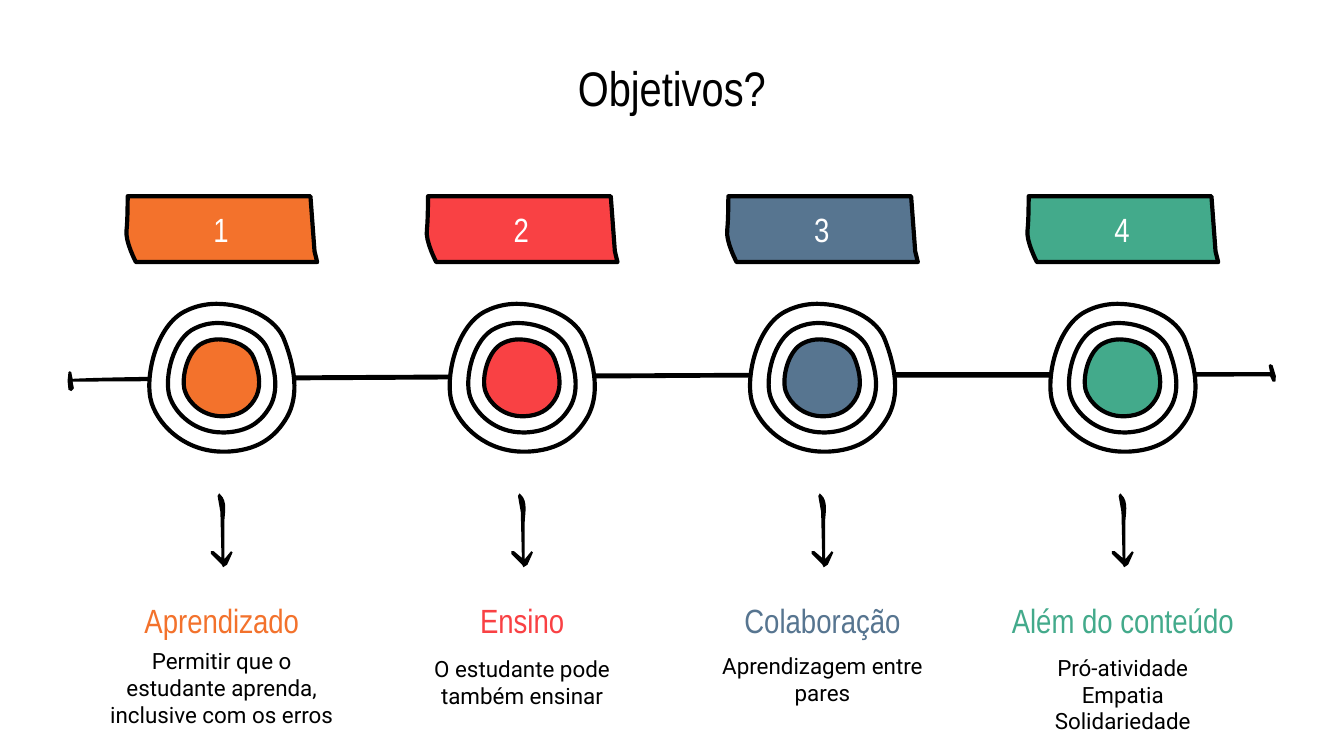
from pptx import Presentation
from pptx.dml.color import RGBColor
from pptx.enum import text
from pptx.oxml import ns, xmlchemy
from pptx.util import Pt

BLACK = RGBColor(0x00, 0x00, 0x00)
WHITE = RGBColor(0xFF, 0xFF, 0xFF)
ORANGE = RGBColor(0xF3, 0x72, 0x2C)
RED = RGBColor(0xF9, 0x41, 0x44)
BLUE = RGBColor(0x57, 0x75, 0x90)
GREEN = RGBColor(0x43, 0xAA, 0x8B)

HEAD_FONT, BODY_FONT = "Arial Narrow", "Roboto"
FIRST_X, PITCH = 118.8, 160.9  # column centres

# Goal: heading, body lines, top of the body box, colour
GOALS = [
    ("Aprendizado", ["Permitir que o estudante aprenda, inclusive com os erros"], 345.6, ORANGE),
    ("Ensino", ["O estudante pode também ensinar"], 342.7, RED),
    ("Colaboração", ["Aprendizagem entre pares"], 341.3, BLUE),
    ("Além do conteúdo", ["Pró-atividade", "Empatia", "Solidariedade"], 349.2, GREEN),
]

# Outlines: a start point, then lines (x, y) and curves (two controls and an end)
TIMELINE = [
    (680.4, 195.1), (679.7, 196), (680.4, 199.4), (493, 199.4), (305.3, 200.2),
    (270, 200.9, 74.2, 200.9, 38.9, 203),
    (38.2, 199.4), (37.4, 198.9), (36.7, 199.4), (36.2, 204), (36.7, 208.8),
    (38.2, 209.5), (39.6, 208.1), (38.9, 204.5), (293.8, 203), (388, 202.3),
    (576, 202.3), (680.4, 201.6), (681.8, 204.5), (683.3, 204.5), (683.5, 201.5),
    (681.8, 195.8),
]
RING = [
    (-2.5, -39.6),
    (-8.3, -39.6, -14, -38.2, -18.4, -36),
    (-34.9, -28.8, -41.4, 0.7, -37.1, 13.7),
    (-32.8, 26.6, -18.4, 39.6, 1.1, 39.6),
    (3.2, 39.6),
    (18.4, 38.9, 27.7, 33.1, 34.2, 23),
    (41.4, 12.2, 40.7, -2.2, 34.2, -19.4),
    (29.9, -32.4, 12.6, -39.6, -2.5, -39.6),
]
BANNER = [
    (-50.4, 0),
    (-50.4, 0, -50.4, 13, -51, 18),
    (-52, 24, -46, 35.3, -46, 35.3),
    (51.1, 35.3), (49.7, 29.5), (47.5, 0),
]
ARROW = [
    (0.7, 39.6), (2.9, 38.2), (5.8, 31.7), (5, 31), (1.4, 35.3), (1.4, 15.8),
    (1.4, 11.5, 3.4, 4.3, -0.7, 0.7),
    (-1.4, 0), (-2.2, 1.4), (-0.7, 10), (-0.1, 34.6), (-4.3, 31), (-5.8, 31),
    (-5.8, 32.4), (0, 38.2),
]


def bend_curves(sp, outline):
    """Join the lines through each curve's controls and end into one curve."""
    lines = iter(sp._element.findall(".//" + ns.qn("a:lnTo")))
    for seg in outline[1:]:
        parts = [next(lines) for _ in range(len(seg) // 2)]
        if len(parts) == 3:
            curve = xmlchemy.OxmlElement("a:cubicBezTo")
            parts[0].addprevious(curve)
            for part in parts:
                curve.append(part[0])
                part.getparent().remove(part)


def add_outline(s, outline, fill, x=0, y=0, scale=1, line=True):
    pts = [(Pt(x + seg[i] * scale), Pt(y + seg[i + 1] * scale))
           for seg in outline for i in range(0, len(seg), 2)]
    fb = s.shapes.build_freeform(*pts[0])
    fb.add_line_segments(pts[1:], close=True)
    sp = fb.convert_to_shape()
    bend_curves(sp, outline)
    sp.shadow.inherit = False
    sp.fill.solid()
    sp.fill.fore_color.rgb = fill
    if line:
        sp.line.color.rgb = BLACK
        sp.line.width = Pt(2.25)
    else:
        sp.line.fill.background()


def fill_text(sp, lines, size, font, color, anchor):
    tf = sp.text_frame
    tf.word_wrap = True
    tf.auto_size = text.MSO_AUTO_SIZE.NONE
    tf.vertical_anchor = anchor
    tf.margin_left = tf.margin_right = tf.margin_top = tf.margin_bottom = Pt(7.2)
    for i, line in enumerate(lines):
        p = tf.add_paragraph() if i else tf.paragraphs[0]
        p.text = line
        p.alignment = text.PP_ALIGN.CENTER
        p.font.size, p.font.name = Pt(size), font
        p.font.color.rgb = color


def add_label(s, cx, top, width, height, lines, size, font, color):
    sp = s.shapes.add_textbox(Pt(cx - width / 2), Pt(top), Pt(width), Pt(height))
    fill_text(sp, lines, size, font, color, text.MSO_ANCHOR.MIDDLE)


def add_goal(s, number, cx, heading, lines, body_top, color):
    # Target: three nested rings
    for scale, fill in ((1, WHITE), (0.74, WHITE), (0.52, color)):
        add_outline(s, RING, fill, cx - 0.4, 202.4, scale)
    # Numbered banner and arrow
    add_outline(s, BANNER, color, cx, 105.1)
    add_outline(s, ARROW, BLACK, cx, 264.3, line=False)
    # Texts
    add_label(s, cx, body_top, 142.6, 45.4, lines, 12, BODY_FONT, BLACK)
    add_label(s, cx, 320.4, 142.6, 23.8, [heading], 18, HEAD_FONT, color)
    add_label(s, cx - 0.4, 110.9, 82.8, 23.8, [str(number)], 18, HEAD_FONT, WHITE)


def main():
    prs = Presentation()
    prs.slide_width, prs.slide_height = Pt(720), Pt(405)
    s = prs.slides.add_slide(prs.slide_layouts[5])

    # Title
    title = s.shapes.title
    title.left, title.top, title.width, title.height = Pt(36), Pt(23.8), Pt(648), Pt(45.4)
    fill_text(title, ["Objetivos?"], 26, HEAD_FONT, BLACK, text.MSO_ANCHOR.TOP)

    # Timeline with its four goals
    add_outline(s, TIMELINE, BLACK, line=False)
    for i, goal in enumerate(GOALS):
        add_goal(s, i + 1, FIRST_X + i * PITCH, *goal)

    prs.save("out.pptx")


if __name__ == "__main__":
    main()
